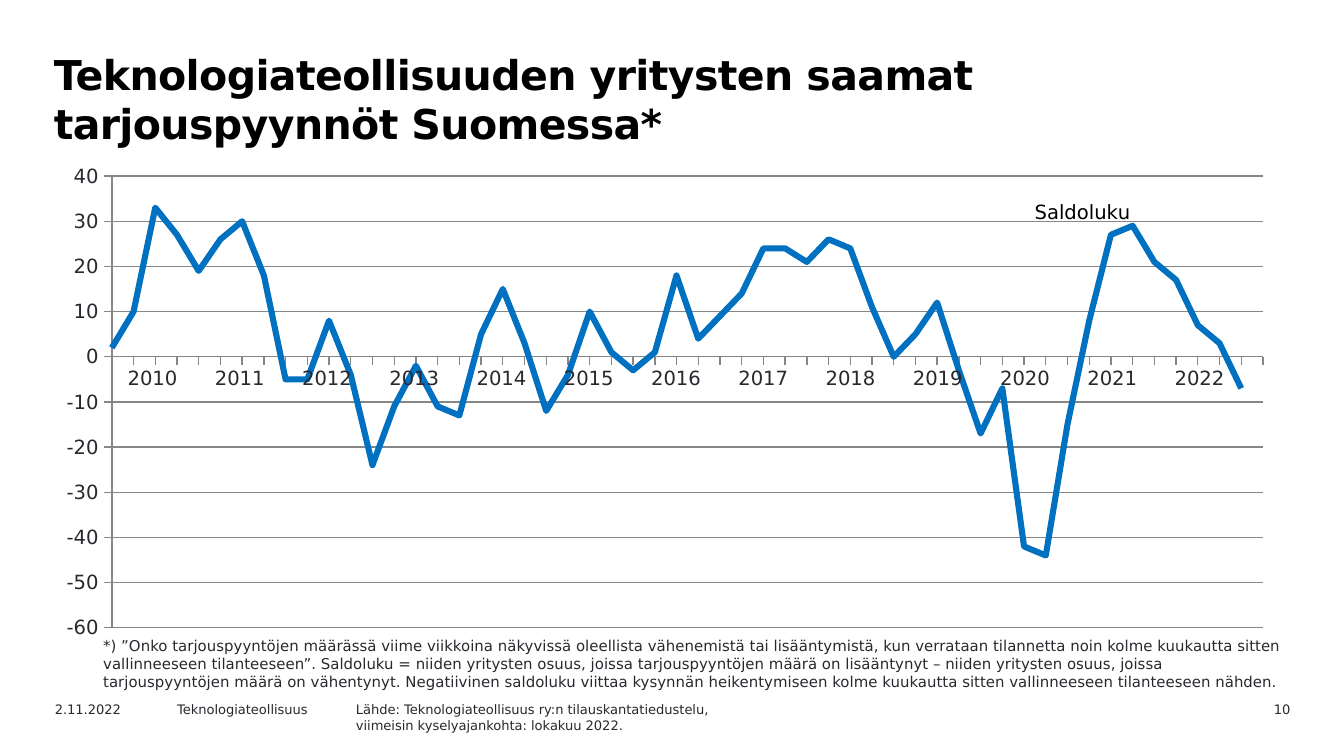
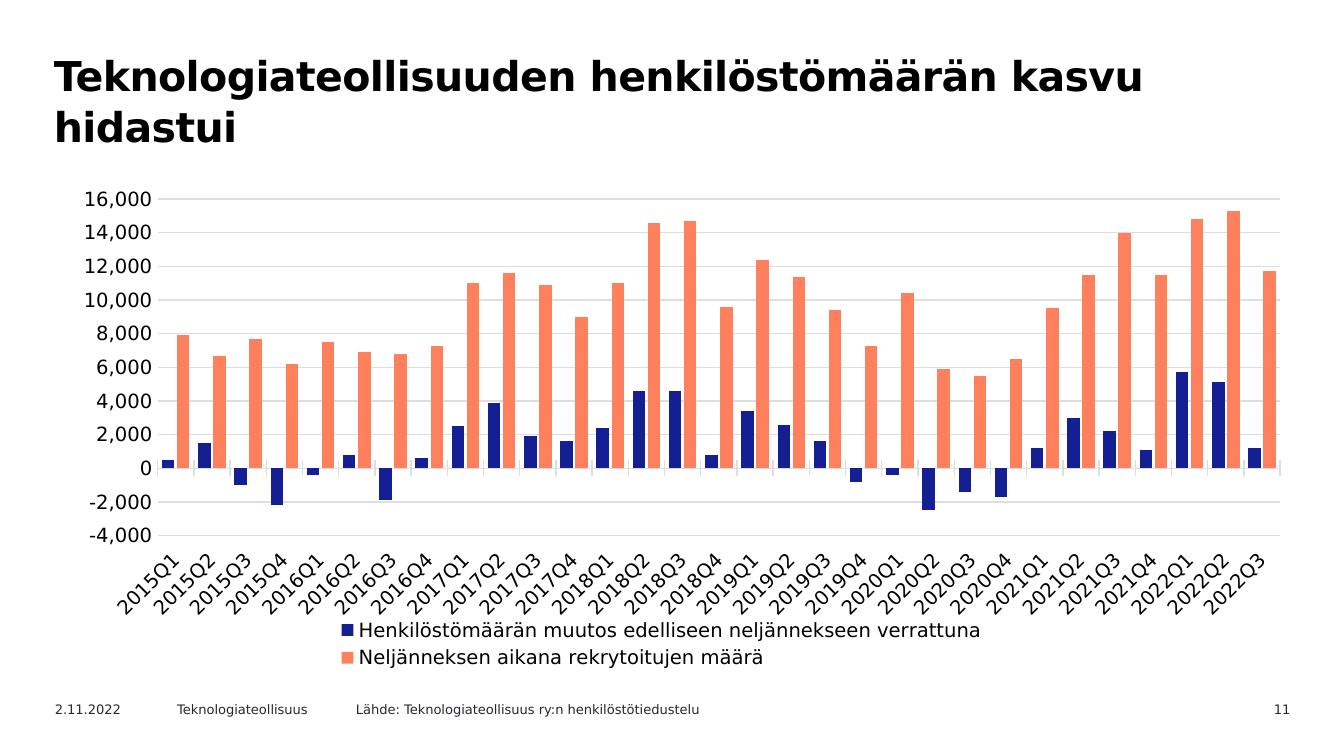
from lxml.etree import SubElement, Element
from pptx import Presentation
from pptx.chart.data import CategoryChartData
from pptx.dml.color import RGBColor
from pptx.enum.chart import XL_CHART_TYPE, XL_LEGEND_POSITION, XL_TICK_LABEL_POSITION, XL_TICK_MARK
from pptx.enum.text import MSO_ANCHOR, MSO_AUTO_SIZE, PP_ALIGN
from pptx.oxml.ns import qn
from pptx.util import Pt

FACE, INK, BLACK, GREY, PALE = "DejaVu Sans", "29282E", "000000", "868686", "DEDDE1"
LEFT, RIGHT = PP_ALIGN.LEFT, PP_ALIGN.RIGHT


def dress(font, size, hue, bold=False):
    look = {"name": FACE, "size": Pt(size), "bold": bold}
    for key, value in look.items():
        setattr(font, key, value)
    font.color.rgb = RGBColor.from_string(hue)


def place(node, index, spot):
    for old in node.findall(qn("c:layout")):
        node.remove(old)
    layout = Element(qn("c:layout"))
    node.insert(index, layout)
    manual = SubElement(layout, qn("c:manualLayout"))
    if len(spot) == 4:
        SubElement(manual, qn("c:layoutTarget")).set("val", "inner")
    for key in ("xMode", "yMode"):
        SubElement(manual, qn("c:" + key)).set("val", "edge")
    for key, value in zip("xywh", spot):
        SubElement(manual, qn("c:" + key)).set("val", str(value))


deck = Presentation()
deck.slide_width, deck.slide_height = Pt(720), Pt(405)

note = (
    "*) ”Onko tarjouspyyntöjen määrässä viime viikkoina näkyvissä oleellista vähenemistä tai "
    "lisääntymistä, kun verrataan tilannetta noin kolme kuukautta sitten vallinneeseen "
    "tilanteeseen”. Saldoluku = niiden yritysten osuus, joissa tarjouspyyntöjen määrä on "
    "lisääntynyt – niiden yritysten osuus, joissa tarjouspyyntöjen määrä on vähentynyt. "
    "Negatiivinen saldoluku viittaa kysynnän heikentymiseen kolme kuukautta sitten "
    "vallinneeseen tilanteeseen nähden."
)
pages = [
    {
        "title": "Teknologiateollisuuden yritysten saamat tarjouspyynnöt Suomessa*",
        "high": 67.5, "pitch": None, "number": "10",
        "source": ["Lähde: Teknologiateollisuus ry:n tilauskantatiedustelu,",
                   "viimeisin kyselyajankohta: lokakuu 2022."],
        "notes": [([note], 48.2, 337.7, 647.3, 36, 8, LEFT)],
        "kind": XL_CHART_TYPE.LINE,
        "frame": (30.2, 85, 661, 260),
        "plot": (0.045, 0.036, 0.933, 0.931),
        "cats": [str(n) for n in range(1, 55)],
        "series": [("Series 1", "0070C0", [
            2, 10, 33, 27, 19, 26, 30, 18, -5, -5, 8, -4, -24, -11, -2, -11, -13, 5,
            15, 3, -12, -4, 10, 1, -3, 1, 18, 4, 9, 14, 24, 24, 21, 26, 24, 11,
            0, 5, 12, -3, -17, -7, -42, -44, -15, 8, 27, 29, 21, 17, 7, 3, -7, None])],
        "scale": (-60, 40, 10), "grid": GREY, "ink": INK,
    },
    {
        "title": "Teknologiateollisuuden henkilöstömäärän kasvu hidastui",
        "high": 51, "pitch": Pt(27), "number": "11",
        "source": ["Lähde: Teknologiateollisuus ry:n henkilöstötiedustelu"],
        "notes": [],
        "kind": XL_CHART_TYPE.COLUMN_CLUSTERED,
        "frame": (20.2, 89.3, 669, 272),
        "plot": (0.096, 0.064, 0.899, 0.663),
        "cats": [f"{year}Q{part}" for year in range(2015, 2023) for part in range(1, 5)][:31],
        "series": [
            ("Henkilöstömäärän muutos edelliseen neljännekseen verrattuna", "141F94", [
                500, 1500, -1000, -2200, -400, 800, -1900, 600, 2500, 3900, 1900,
                1600, 2400, 4600, 4600, 800, 3400, 2600, 1600, -800, -400, -2500,
                -1400, -1700, 1200, 3000, 2200, 1100, 5700, 5100, 1200]),
            ("Neljänneksen aikana rekrytoitujen määrä", "FF805C", [
                7900, 6700, 7700, 6200, 7500, 6900, 6800, 7300, 11000, 11600, 10900,
                9000, 11000, 14600, 14700, 9600, 12400, 11400, 9400, 7300, 10400, 5900,
                5500, 6500, 9500, 11500, 14000, 11500, 14800, 15300, 11700]),
        ],
        "scale": (-4000, 16000, 2000), "grid": PALE, "ink": BLACK,
    },
]

slides, charts = [], []
for page in pages:
    slide = deck.slides.add_slide(deck.slide_layouts[5])
    slides.append(slide)

    title = slide.shapes.title
    spot = {"left": 20.2, "top": 23, "width": 629.3, "height": page["high"]}
    for key, value in spot.items():
        setattr(title, key, Pt(value))
    frame = title.text_frame
    form = {"text": page["title"], "word_wrap": True, "auto_size": MSO_AUTO_SIZE.NONE,
            "vertical_anchor": MSO_ANCHOR.TOP, "margin_left": Pt(8.6)}
    for key, value in form.items():
        setattr(frame, key, value)
    para = frame.paragraphs[0]
    para.alignment, para.line_spacing = LEFT, page["pitch"]
    run = para.runs[0]
    dress(run.font, 22, BLACK, True)
    run.font._element.set("spc", "-30")

    chart_data = CategoryChartData()
    chart_data.categories = page["cats"]
    for name, hue, values in page["series"]:
        chart_data.add_series(name, values)
    box = [Pt(v) for v in page["frame"]]
    chart = slide.shapes.add_chart(page["kind"], *box, chart_data).chart
    charts.append(chart)
    dress(chart.font, 10.5, page["ink"])
    chart.has_legend = chart.has_title = False
    place(chart._chartSpace.chart.plotArea, 0, page["plot"])
    chart.plots[0].vary_by_categories = False
    axis = chart.value_axis
    low, high, step = page["scale"]
    look = {"minimum_scale": low, "maximum_scale": high, "major_unit": step,
            "has_major_gridlines": True, "minor_tick_mark": XL_TICK_MARK.NONE}
    for key, value in look.items():
        setattr(axis, key, value)
    dress(axis.tick_labels.font, 10.5, page["ink"])
    chart.category_axis.has_major_gridlines = False
    for line in (axis.major_gridlines.format.line, axis.format.line,
                 chart.category_axis.format.line):
        line.width = Pt(0.75)
        line.color.rgb = RGBColor.from_string(page["grid"])

    foot = [
        ([page["number"]], 630.7, 372.2, 67.7, 13, 7, RIGHT),
        (["2.11.2022"], 22.3, 372.2, 72, 13, 7, LEFT),
        (["Teknologiateollisuus"], 87.8, 372.2, 102.2, 13, 7, LEFT),
        (page["source"], 183.6, 372.2, 238, 13 * len(page["source"]), 7, LEFT),
    ]
    for lines, left, top, width, tall, size, align in foot + page["notes"]:
        label = slide.shapes.add_textbox(Pt(left), Pt(top), Pt(width), Pt(tall))
        label.text_frame.word_wrap = True
        label.text_frame.text = "\n".join(lines)
        for para in label.text_frame.paragraphs:
            para.alignment = align
            dress(para.runs[0].font, size, INK)

trend, staff = charts

series = trend.plots[0].series[0]
series.smooth = False
series.format.line.width = Pt(3.25)
series.format.line.color.rgb = RGBColor.from_string(pages[0]["series"][0][1])
trend.has_title = True
head = trend.chart_title
head.text_frame.text = "Saldoluku"
dress(head.text_frame.paragraphs[0].runs[0].font, 10.5, BLACK)
place(head._element, 1, (0.79, 0.075))
head._element.find(qn("c:overlay")).set("val", "1")
trend.category_axis.tick_label_position = XL_TICK_LABEL_POSITION.NONE
for axis in (trend.category_axis, trend.value_axis):
    axis.major_tick_mark = XL_TICK_MARK.OUTSIDE
root = trend.value_axis._element
for old in root.findall(qn("c:crossBetween")):
    root.remove(old)
cross = Element(qn("c:crossBetween"))
cross.set("val", "midCat")
root.find(qn("c:crosses")).addnext(cross)

years = range(2010, 2023)
table = slides[0].shapes.add_table(1, len(years), Pt(58.3), Pt(193), Pt(607.7), Pt(22.3)).table
table.first_row = table.horz_banding = False
table._tbl.tblPr.find(qn("a:tableStyleId")).text = "{2D5ABB26-0587-4C30-8999-92F81FD0307C}"
for col, year in enumerate(years):
    cell = table.cell(0, col)
    cell.fill.background()
    cell.text = str(year)
    para = cell.text_frame.paragraphs[0]
    para.alignment = PP_ALIGN.CENTER
    dress(para.runs[0].font, 10.5, INK)

plot = staff.plots[0]
plot.gap_width, plot.overlap = 70, -21
for series, (name, hue, values) in zip(plot.series, pages[1]["series"]):
    series.invert_if_negative = False
    series.format.fill.solid()
    series.format.fill.fore_color.rgb = RGBColor.from_string(hue)
axis = staff.value_axis
axis.major_tick_mark = XL_TICK_MARK.NONE
axis.format.line.fill.background()
axis.tick_labels.number_format = "#,##0"
axis.tick_labels.number_format_is_linked = False
axis = staff.category_axis
axis.major_tick_mark = XL_TICK_MARK.CROSS
axis.tick_label_position = XL_TICK_LABEL_POSITION.LOW
dress(axis.tick_labels.font, 10.5, BLACK)
axis._element.find(qn("c:txPr")).find(qn("a:bodyPr")).set("rot", "-2700000")
staff.has_legend = True
staff.legend.position = XL_LEGEND_POSITION.BOTTOM
staff.legend.include_in_layout = False
dress(staff.legend.font, 10.5, BLACK)

deck.save("out.pptx")
